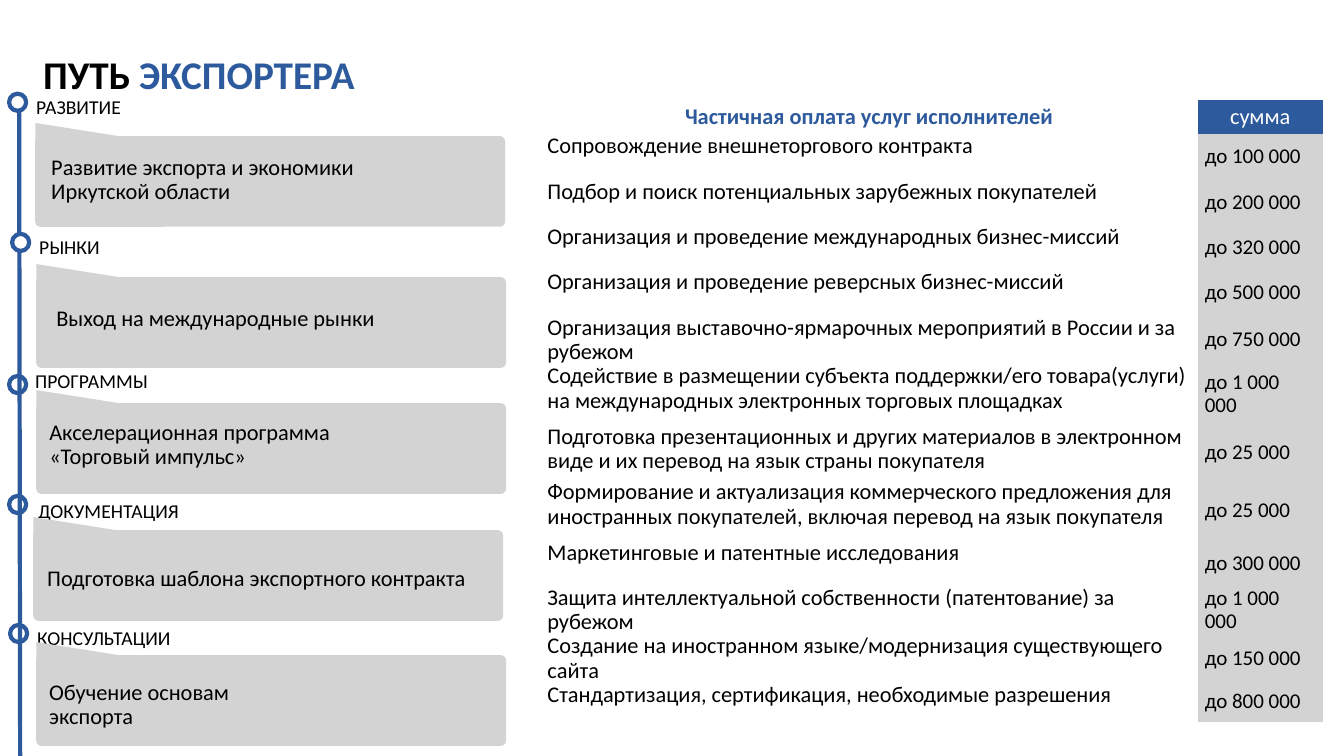
import pptx
import pptx.util
import pptx.dml.color
import pptx.enum.shapes
import pptx.enum.text
from lxml import etree

Inches = pptx.util.Inches
SHAPE = pptx.enum.shapes.MSO_SHAPE
ANCHOR = pptx.enum.text.MSO_ANCHOR
ALIGN = pptx.enum.text.PP_ALIGN

BLUE, GREY, BLACK, WHITE = "2C5A9C", "D3D3D3", "000000", "FFFFFF"
PLAIN_TABLE_STYLE = "{2D5ABB26-0587-4C30-8999-92F81FD0307C}"

STAGE_LABELS = [
    ("РАЗВИТИЕ", 0.26, 0.89, 1.37),
    ("РЫНКИ", 0.29, 2.28, 1.03),
    ("ПРОГРАММЫ", 0.25, 3.61, 1.72),
    ("ДОКУМЕНТАЦИЯ", 0.28, 4.9, 2.03),
    ("КОНСУЛЬТАЦИИ", 0.27, 6.16, 1.94),
]
CARDS = [(0.35, 1.35), (0.36, 2.75), (0.36, 4.0), (0.33, 5.26), (0.36, 6.5)]
CARD_TEXTS = [
    ("Развитие экспорта и экономики\nИркутской области", 0.41, 1.42, 4.35, 0.73),
    ("Выход на международные рынки", 0.46, 2.82, 4.42, 0.7),
    ("Акселерационная программа \v«Торговый импульс»", 0.39, 3.79, 4.49, 1.25),
    ("Подготовка шаблона экспортного контракта", 0.37, 5.27, 4.54, 0.95),
    ("Обучение основам экспорта", 0.39, 6.23, 2.03, 1.54),
]
DOTS_BEHIND_LINE = [(0.09, 3.73), (0.09, 4.92), (0.1, 6.2)]
DOTS_ON_LINE = [(0.09, 0.93), (0.12, 2.32)]
SERVICES = [
    ("Сопровождение внешнеторгового контракта", "до 100 000", 0.45),
    ("Подбор и поиск потенциальных зарубежных покупателей", "до 200 000", 0.45),
    ("Организация и проведение международных бизнес-миссий", "до 320 000", 0.45),
    ("Организация и проведение реверсных бизнес-миссий", "до 500 000", 0.45),
    ("Организация выставочно-ярмарочных мероприятий в России и за рубежом",
     "до 750 000", 0.36),
    ("Содействие в размещении субъекта поддержки/его товара(услуги) "
     "на международных электронных торговых площадках", "до 1 000 000", 0.6),
    ("Подготовка презентационных и других материалов в электронном виде "
     "и их перевод на язык страны покупателя", "до 25 000", 0.55),
    ("Формирование и актуализация коммерческого предложения для иностранных "
     "покупателей, включая перевод на язык покупателя", "до 25 000", 0.61),
    ("Маркетинговые и патентные исследования", "до 300 000", 0.44),
    ("Защита интеллектуальной собственности (патентование) за рубежом",
     "до 1 000 000", 0.4),
    ("Создание на иностранном языке/модернизация существующего сайта",
     "до 150 000", 0.37),
    ("Стандартизация, сертификация, необходимые разрешения", "до 800 000", 0.39),
]


def rgb(value):
    return pptx.dml.color.RGBColor.from_string(value)


def write_text(frame, text, accent="", size=16, color=BLACK, bold=False,
               align=ALIGN.LEFT, spacing=0.9):
    frame.word_wrap = True
    frame.text = text
    if accent:
        frame.paragraphs[0].add_run().text = accent
    for paragraph in frame.paragraphs:
        paragraph.alignment = align
        paragraph.line_spacing = spacing
        for run in paragraph.runs:
            run.font.name = "Calibri"
            run.font.size = pptx.util.Pt(size)
            run.font.bold = bold
            run.font.color.rgb = rgb(BLUE if accent and run.text == accent else color)


def add_text(slide, text, left, top, width, height, anchor=ANCHOR.TOP, **text_format):
    box = slide.shapes.add_textbox(Inches(left), Inches(top), Inches(width), Inches(height))
    box.text_frame.vertical_anchor = anchor
    write_text(box.text_frame, text, **text_format)


def add_figure(slide, kind, left, top, width, height, fill):
    figure = slide.shapes.add_shape(
        kind, Inches(left), Inches(top), Inches(width), Inches(height))
    figure.shadow.inherit = False
    figure.fill.solid()
    figure.fill.fore_color.rgb = rgb(fill)
    figure.line.fill.background()
    return figure


def add_card(slide, left, top):
    add_figure(slide, SHAPE.RIGHT_TRIANGLE, left, top - 0.13, 2.15, 0.34, GREY)
    body = add_figure(slide, SHAPE.ROUNDED_RECTANGLE, left, top, 4.66, 0.9, GREY)
    body.adjustments[0] = 0.057


def style_line(line):
    line.color.rgb = rgb(BLUE)
    line.width = pptx.util.Pt(3)


def add_dots(slide, places):
    for left, top in places:
        style_line(add_figure(slide, SHAPE.OVAL, left, top, 0.17, 0.17, WHITE).line)


def add_timeline(slide):
    timeline = slide.shapes.add_connector(
        pptx.enum.shapes.MSO_CONNECTOR.STRAIGHT,
        Inches(0.19), Inches(0.97), Inches(0.2), Inches(7.59))
    style_line(timeline.line)
    etree.SubElement(timeline._element.spPr, pptx.oxml.ns.qn("a:effectLst"))


def fill_cell(cell, text, fill=None, anchor=ANCHOR.MIDDLE, **text_format):
    cell.margin_left = cell.margin_right = Inches(0.07)
    cell.margin_top = cell.margin_bottom = 0
    cell.vertical_anchor = anchor
    if fill:
        cell.fill.solid()
        cell.fill.fore_color.rgb = rgb(fill)
    else:
        cell.fill.background()
    write_text(cell.text_frame, text, **text_format)


def add_services_table(slide):
    table = slide.shapes.add_table(
        len(SERVICES) + 1, 2, Inches(5.36), Inches(0.99), Inches(7.76), Inches(5.86)).table
    table.first_row = table.horz_banding = False
    table._tbl.tblPr.find(pptx.oxml.ns.qn("a:tableStyleId")).text = PLAIN_TABLE_STYLE
    table.columns[0].width = Inches(6.52)
    table.columns[1].width = Inches(1.24)
    table.rows[0].height = Inches(0.34)
    fill_cell(table.cell(0, 0), "Частичная оплата услуг исполнителей",
              color=BLUE, bold=True, align=ALIGN.CENTER)
    fill_cell(table.cell(0, 1), "сумма", fill=BLUE, color=WHITE, align=ALIGN.CENTER)
    for row, (service, amount, height) in enumerate(SERVICES, 1):
        table.rows[row].height = Inches(height)
        fill_cell(table.cell(row, 0), service, anchor=ANCHOR.TOP)
        fill_cell(table.cell(row, 1), amount, fill=GREY, size=15)


def main():
    deck = pptx.Presentation()
    deck.slide_width, deck.slide_height = Inches(13.33), Inches(7.5)
    slide = deck.slides.add_slide(deck.slide_layouts[6])
    for label, left, top, width in STAGE_LABELS:
        add_text(slide, label, left, top, width, 0.34, size=14, spacing=1.0)
    add_dots(slide, DOTS_BEHIND_LINE)
    for left, top in CARDS:
        add_card(slide, left, top)
    add_text(slide, "ПУТЬ", 0.33, 0.5, 5.87, 0.5, accent=" ЭКСПОРТЕРА", size=28, bold=True)
    add_timeline(slide)
    add_dots(slide, DOTS_ON_LINE)
    for text, left, top, width, height in CARD_TEXTS:
        add_text(slide, text, left, top, width, height, anchor=ANCHOR.MIDDLE)
    add_services_table(slide)
    deck.save("out.pptx")


if __name__ == "__main__":
    main()
